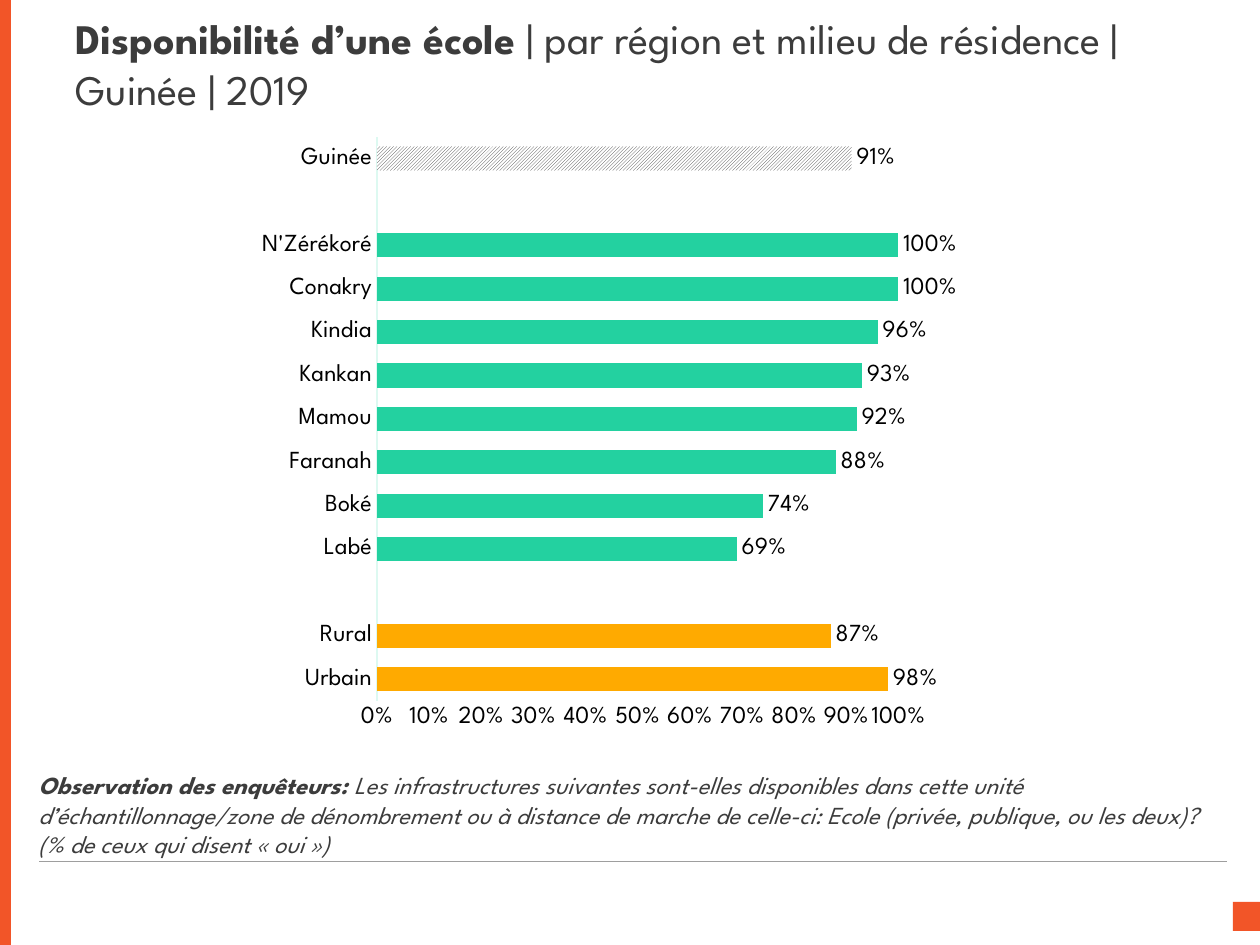
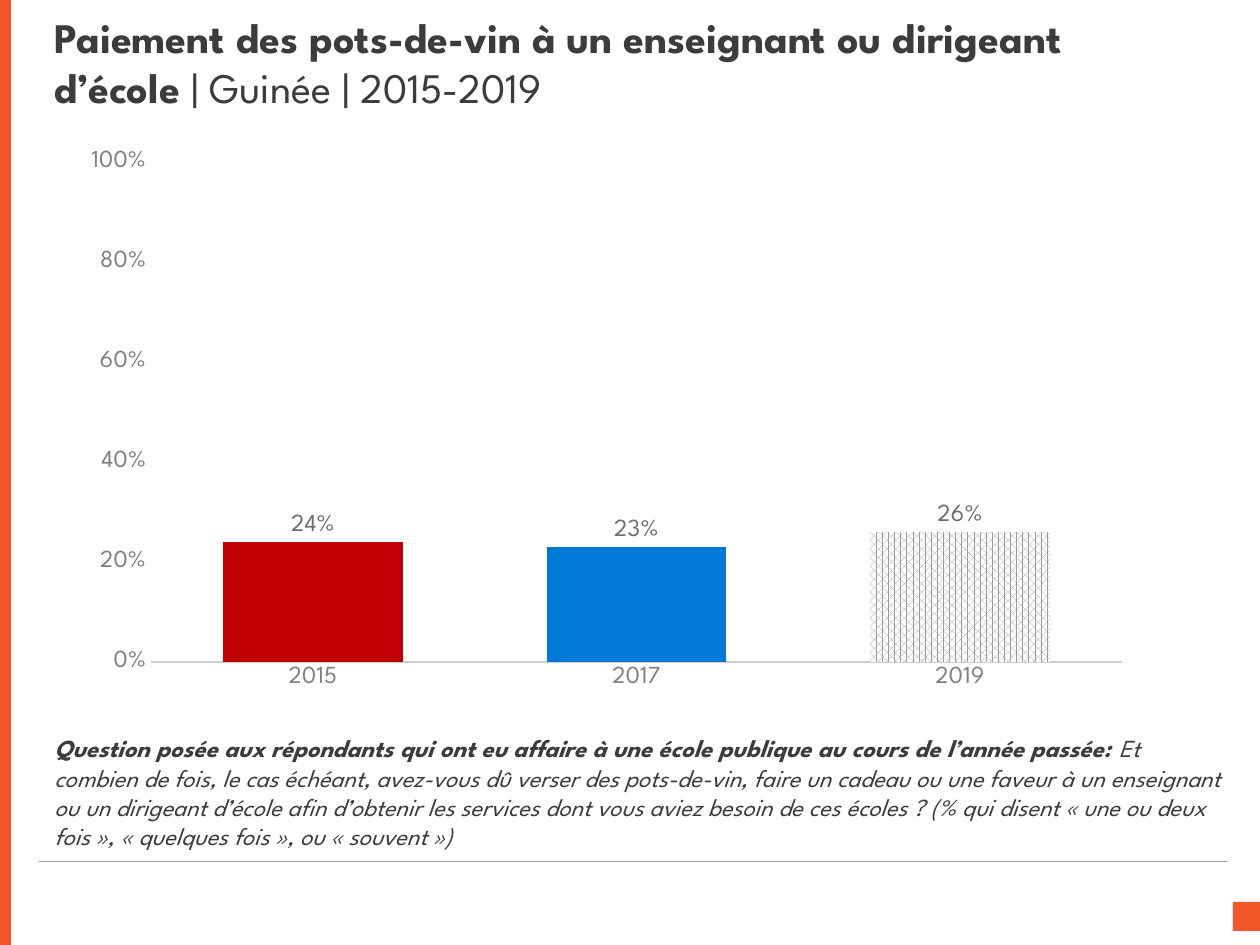
"""Build two slides on school availability and school bribes in Guinea."""
from lxml import etree
from pptx import Presentation
from pptx.chart.data import CategoryChartData
from pptx.dml.color import RGBColor
from pptx.enum.chart import XL_CHART_TYPE, XL_LABEL_POSITION, XL_TICK_MARK
from pptx.enum.dml import MSO_PATTERN
from pptx.enum.shapes import MSO_CONNECTOR, MSO_SHAPE
from pptx.enum.text import MSO_ANCHOR, MSO_AUTO_SIZE, PP_ALIGN
from pptx.oxml.ns import qn
from pptx.util import Emu, Pt

BAR = XL_CHART_TYPE.BAR_CLUSTERED
COLUMN = XL_CHART_TYPE.COLUMN_CLUSTERED
OUTSIDE_END = XL_LABEL_POSITION.OUTSIDE_END
NO_TICK = XL_TICK_MARK.NONE
HATCH = MSO_PATTERN.DARK_UPWARD_DIAGONAL
DOTS = MSO_PATTERN.PERCENT_70
STRAIGHT = MSO_CONNECTOR.STRAIGHT
RECTANGLE = MSO_SHAPE.RECTANGLE
LEFT = PP_ALIGN.LEFT
MIDDLE = MSO_ANCHOR.MIDDLE
TOP = MSO_ANCHOR.TOP
NO_FIT = MSO_AUTO_SIZE.NONE

EMU_PER_PX = 914400 / 126
FONT = "League Spartan"
TITLE_SIZE = 24
TEXT_SIZE = 14
PERCENT = "0%"
COLOURS = {
    "accent": "F25528",
    "text": "3C3C3C",
    "rule": "9E9E9E",
    "white": "FFFFFF",
    "black": "000000",
    "region": "23D1A0",
    "residence": "FFAA00",
    "region_axis": "DDF9F1",
    "year_2015": "C00000",
    "year_2017": "0079D6",
    "year_axis": "CECECE",
    "year_tick": "808080",
    "year_label": "6D6D6D",
}


def px(*lengths):
    """Turn px lengths into a list of EMU lengths."""
    return [Emu(round(length * EMU_PER_PX)) for length in lengths]


def rgb(colour):
    """Return the RGB value of a named colour."""
    return RGBColor.from_string(COLOURS[colour])


def style_font(font, size, colour):
    """Give a font the shared typeface with a size and a colour."""
    font.name = FONT
    font.size = Pt(size)
    font.color.rgb = rgb(colour)


def paint(fill, colour, pattern=None):
    """Fill with a solid colour, or with a pattern on white."""
    if pattern is None:
        fill.solid()
        fill.fore_color.rgb = rgb(colour)
    else:
        fill.patterned()
        fill.pattern = pattern
        fill.fore_color.rgb = rgb(colour)
        fill.back_color.rgb = rgb("white")


def add_block(slide, box):
    """Add a plain accent rectangle."""
    block = slide.shapes.add_shape(RECTANGLE, *px(*box))
    block.shadow.inherit = False
    paint(block.fill, "accent")
    block.line.fill.background()


def add_frame(slide):
    """Add the corner square, the footer rule and the side band."""
    add_block(slide, (1233, 902, 27, 29))
    rule = slide.shapes.add_connector(STRAIGHT, *px(1227, 861, 39, 861))
    rule.line.color.rgb = rgb("rule")
    rule.line.width = Pt(0.25)
    etree.SubElement(rule._element.spPr, qn("a:effectLst"))
    add_block(slide, (0, 0, 11, 945))


def write(holder, lead, rest, size, anchor, italic=False):
    """Write a bold lead followed by plain text."""
    frame = holder.text_frame
    frame.word_wrap = True
    frame.auto_size = NO_FIT
    frame.vertical_anchor = anchor
    paragraph = frame.paragraphs[0]
    paragraph.alignment = LEFT
    for words, bold in ((lead, True), (rest, False)):
        run = paragraph.add_run()
        run.text = words
        style_font(run.font, size, "text")
        run.font.bold = bold
        run.font.italic = italic


def add_title_slide(prs, box, lead, rest):
    """Add a framed slide with its title."""
    slide = prs.slides.add_slide(prs.slide_layouts[5])
    add_frame(slide)
    title = slide.shapes.title
    title.left, title.top, title.width, title.height = px(*box)
    write(title, lead, rest, TITLE_SIZE, MIDDLE)
    return slide


def add_question(slide, box, lead, rest):
    """Add the italic survey question under the chart."""
    question = slide.shapes.add_textbox(*px(*box))
    write(question, lead, rest, TEXT_SIZE, TOP, italic=True)


def place_plot(chart, area):
    """Fix the inner plot area as fractions of the chart."""
    plot_area = chart._chartSpace.chart.plotArea
    for old in plot_area.findall(qn("c:layout")):
        plot_area.remove(old)
    layout = etree.Element(qn("c:layout"))
    manual = etree.SubElement(layout, qn("c:manualLayout"))
    settings = [("layoutTarget", "inner"), ("xMode", "edge"), ("yMode", "edge")]
    settings += zip("xywh", area)
    for tag, value in settings:
        etree.SubElement(manual, qn(f"c:{tag}")).set("val", str(value))
    plot_area.insert(0, layout)


def style_axes(chart, tick_colour, line_colour, line_width, step):
    """Format the category axis and the percentage axis."""
    categories, shares = chart.category_axis, chart.value_axis
    for axis in (categories, shares):
        axis.major_tick_mark = axis.minor_tick_mark = NO_TICK
        axis.has_major_gridlines = False
        style_font(axis.tick_labels.font, TEXT_SIZE, tick_colour)
    categories.format.line.color.rgb = rgb(line_colour)
    categories.format.line.width = Pt(line_width)
    shares.format.line.fill.background()
    shares.minimum_scale, shares.maximum_scale = 0, 1
    shares.major_unit = step
    shares.tick_labels.number_format = PERCENT
    shares.tick_labels.number_format_is_linked = False


def add_share_chart(slide, kind, box, area, rows, colour, label_colour):
    """Add a one-series percentage chart from (name, share, fill) rows."""
    data = CategoryChartData(number_format=PERCENT)
    data.categories = [name for name, _, _ in rows]
    data.add_series("Series 1", [share for _, share, _ in rows])
    chart = slide.shapes.add_chart(kind, *px(*box), data).chart
    chart.has_legend = chart.has_title = False
    style_font(chart.font, TEXT_SIZE, label_colour)
    place_plot(chart, area)

    plot = chart.plots[0]
    plot.gap_width = 80
    plot.vary_by_categories = False
    series = plot.series[0]
    series.invert_if_negative = False
    paint(series.format.fill, colour)
    for index, (_, _, fill) in enumerate(rows):
        if fill:
            paint(series.points[index].format.fill, *fill)

    labels = series.data_labels
    labels.show_value = True
    labels.position = OUTSIDE_END
    labels.number_format = PERCENT
    labels.number_format_is_linked = False
    style_font(labels.font, TEXT_SIZE, label_colour)
    return chart


def add_availability(prs):
    """Add the slide on school availability."""
    slide = add_title_slide(
        prs, (63, 25, 1162, 76), "Disponibilité d’une école ",
        "| par région et milieu de résidence | Guinée | 2019")
    add_question(
        slide, (26, 764, 1198, 87), "Observation des enquêteurs: ",
        "Les infrastructures suivantes sont-elles disponibles dans cette unité "
        "d’échantillonnage/zone de dénombrement ou à distance de marche de "
        "celle-ci: Ecole (privée, publique, ou les deux)? "
        "(% de ceux qui disent « oui »)")
    residence = ("residence",)
    rows = [
        ("Urbain", 0.98, residence),
        ("Rural", 0.87, residence),
        ("", None, None),
        ("Labé", 0.69, None),
        ("Boké", 0.74, None),
        ("Faranah", 0.88, None),
        ("Mamou", 0.92, None),
        ("Kankan", 0.93, None),
        ("Kindia", 0.96, None),
        ("Conakry", 1, None),
        ("N'Zérékoré", 1, None),
        ("", None, None),
        ("Guinée", 0.91, ("text", HATCH)),
    ]
    chart = add_share_chart(slide, BAR, (227, 118, 730, 627),
                            (0.21, 0.03, 0.73, 0.9), rows, "region", "black")
    style_axes(chart, "black", "region_axis", 0.75, 0.1)


def add_bribes(prs):
    """Add the slide on bribes paid at school."""
    slide = add_title_slide(
        prs, (42, 25, 1158, 73),
        "Paiement des pots-de-vin à un enseignant ou dirigeant d’école ",
        "| Guinée | 2015-2019")
    add_question(
        slide, (42, 727, 1197, 129),
        "Question posée aux répondants qui ont eu affaire à une école publique "
        "au cours de l’année passée: ",
        "Et combien de fois, le cas échéant, avez-vous dû verser des "
        "pots-de-vin, faire un cadeau ou une faveur à un enseignant ou un "
        "dirigeant d’école afin d’obtenir les services dont vous aviez besoin "
        "de ces écoles ? (% qui disent « une ou deux fois », "
        "« quelques fois », ou « souvent »)")
    rows = [
        ("2015", 0.24, None),
        ("2017", 0.23, ("year_2017",)),
        ("2019", 0.26, ("rule", DOTS)),
    ]
    chart = add_share_chart(slide, COLUMN, (88, 145, 1055, 562),
                            (0.06, 0.03, 0.92, 0.89), rows,
                            "year_2015", "year_label")
    style_axes(chart, "year_tick", "year_axis", 1.25, 0.2)


def main():
    """Build and save the presentation."""
    prs = Presentation()
    prs.slide_width, prs.slide_height = px(1260, 945)
    add_availability(prs)
    add_bribes(prs)
    prs.save("out.pptx")


if __name__ == "__main__":
    main()
